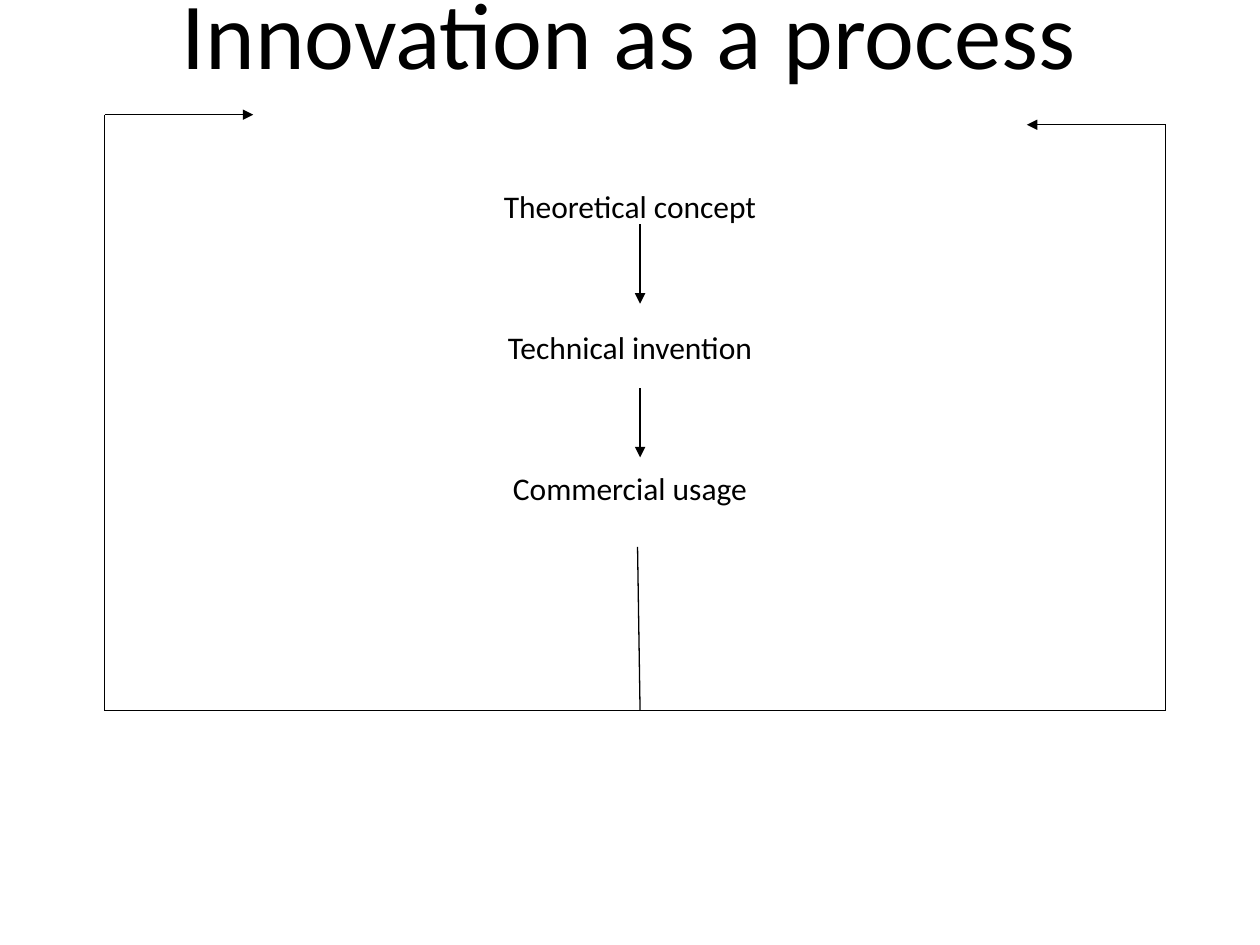
import pptx
import pptx.util
import pptx.dml.color
import pptx.enum.shapes
import pptx.enum.text
import pptx.oxml.ns
from lxml import etree
from pptx.util import Inches, Pt

TITLE = "Innovation as a process"
STEPS = ["Theoretical concept", "Technical invention", "Commercial usage"]
INK = "000000"

CENTRE, LEFT, RIGHT = 5.08, 0.83, 9.25
BOTTOM, LEFT_TOP, RIGHT_TOP = 5.64, 0.91, 0.99

# Each route runs through its points
STEP_ARROWS = [
    [(CENTRE, 1.78), (CENTRE, 2.41)],
    [(CENTRE, 3.08), (CENTRE, 3.63)],
]
STEM = [(5.06, 4.34), (CENTRE, BOTTOM)]
FEEDBACK_LOOPS = [
    [(CENTRE, BOTTOM), (LEFT, BOTTOM), (LEFT, LEFT_TOP), (2.01, LEFT_TOP)],
    [(CENTRE, BOTTOM), (RIGHT, BOTTOM), (RIGHT, RIGHT_TOP), (8.15, RIGHT_TOP)],
]


def color(hex_value):
    return pptx.dml.color.RGBColor.from_string(hex_value)


def fill_placeholder(shape, box, lines, size, anchor, gap=0):
    """Place the shape and write one centred paragraph per line, gap points apart."""
    shape.left, shape.top, shape.width, shape.height = map(Inches, box)
    frame = shape.text_frame
    frame.text = "\n".join(lines)
    frame.word_wrap = True
    frame.auto_size = pptx.enum.text.MSO_AUTO_SIZE.NONE
    frame.vertical_anchor = anchor
    for index, paragraph in enumerate(frame.paragraphs):
        paragraph.alignment = pptx.enum.text.PP_ALIGN.CENTER
        paragraph.line_spacing = 0.9
        paragraph.space_before = Pt(gap if index else 0)
        paragraph.font.name = "Calibri"
        paragraph.font.size = Pt(size)
        paragraph.font.color.rgb = color(INK)


def add_route(slide, points, arrow=True):
    """Join the points with straight lines, with an arrowhead on the last."""
    for start, end in zip(points, points[1:]):
        connector = slide.shapes.add_connector(
            pptx.enum.shapes.MSO_CONNECTOR.STRAIGHT,
            *map(Inches, start + end))
        connector.line.color.rgb = color(INK)
        connector.line.width = Pt(0.75)
        properties = connector._element.spPr
        etree.SubElement(properties, pptx.oxml.ns.qn("a:effectLst"))
    if arrow:
        line = properties.find(pptx.oxml.ns.qn("a:ln"))
        etree.SubElement(line, pptx.oxml.ns.qn("a:tailEnd"), type="triangle")


def main():
    presentation = pptx.Presentation()
    presentation.slide_width = Inches(10)
    presentation.slide_height = Inches(7.5)
    slide = presentation.slides.add_slide(presentation.slide_layouts[0])

    anchors = pptx.enum.text.MSO_ANCHOR
    fill_placeholder(slide.shapes.title, (0.74, 0, 8.5, 0.76), [TITLE],
                     54, anchors.BOTTOM)
    fill_placeholder(slide.placeholders[1], (1.5, 1.47, 7, 3.87), STEPS,
                     18, anchors.TOP, gap=61)

    for points in STEP_ARROWS:
        add_route(slide, points)
    add_route(slide, STEM, arrow=False)
    for points in FEEDBACK_LOOPS:
        add_route(slide, points)

    presentation.save("out.pptx")


if __name__ == "__main__":
    main()
